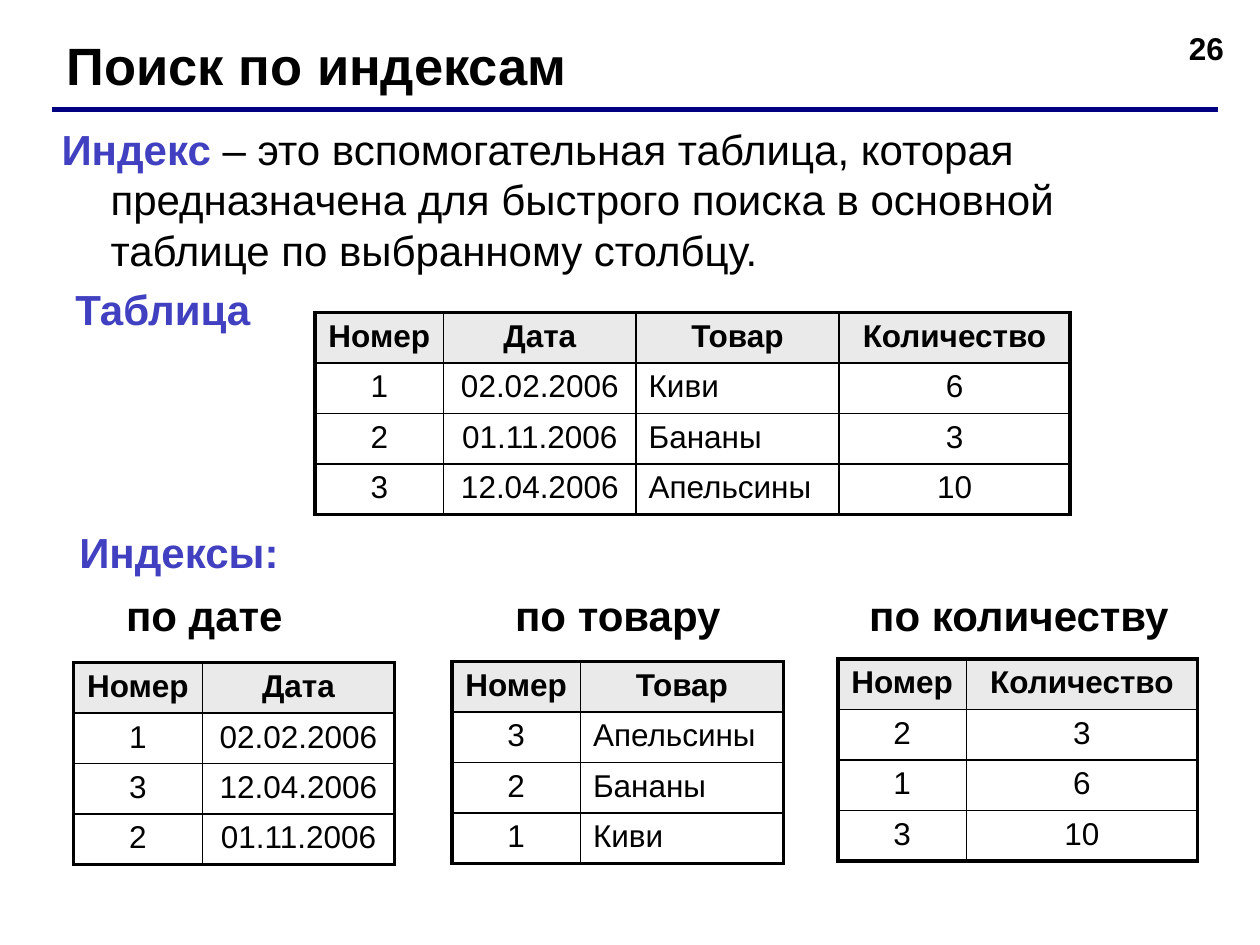
from lxml.etree import SubElement
from pptx import Presentation
from pptx.dml.color import RGBColor
from pptx.enum.shapes import MSO_CONNECTOR
from pptx.enum.text import MSO_ANCHOR, PP_ALIGN
from pptx.oxml import parse_xml
from pptx.oxml.ns import nsdecls, qn
from pptx.util import Pt

BLACK, VIOLET, NAVY, GRAY = "000000", "4040C0", "000080", "EAEAEA"
FONT = "Arial"
ROW_HEIGHT = 28.8
THICK, THIN = 2.25, 1

TITLE = "Поиск по индексам"
PAGE_NUMBER = "26"
DEFINITION = [
    ("Индекс ", VIOLET, True),
    ("– это вспомогательная таблица, которая предназначена для быстрого "
     "поиска в основной таблице по выбранному столбцу.", BLACK, False),
]
LABELS = [
    ("Таблица", VIOLET, 36, 158.4, 115.2),
    ("по товару", BLACK, 287.3, 333.4, 132.5),
    ("по количеству", BLACK, 489.6, 333.4, 187.2),
]
COLUMN_WIDTHS = {"Номер": 73.5, "Дата": 110, "Товар": 116, "Количество": 132}
LEFT_COLUMNS = {"Товар"}
TABLES = [
    (180, 178.6, [
        ("Номер", "Дата", "Товар", "Количество"),
        ("1", "02.02.2006", "Киви", "6"),
        ("2", "01.11.2006", "Бананы", "3"),
        ("3", "12.04.2006", "Апельсины", "10"),
    ]),
    (42.1, 378.7, [
        ("Номер", "Дата"),
        ("1", "02.02.2006"),
        ("3", "12.04.2006"),
        ("2", "01.11.2006"),
    ]),
    (258.2, 378, [
        ("Номер", "Товар"),
        ("3", "Апельсины"),
        ("2", "Бананы"),
        ("1", "Киви"),
    ]),
    (478.8, 376.6, [
        ("Номер", "Количество"),
        ("2", "3"),
        ("1", "6"),
        ("3", "10"),
    ]),
]


def color(value):
    return RGBColor.from_string(value)


def add_text(para, text, size=24, fill=BLACK, bold=True, align=PP_ALIGN.LEFT):
    para.alignment = align
    span = para.add_run()
    span.text = text
    span.font.name = FONT
    span.font.size = Pt(size)
    span.font.bold = bold
    span.font.color.rgb = color(fill)


def add_box(page, left, top, width, height, wrap=True):
    box = page.shapes.add_textbox(Pt(left), Pt(top), Pt(width), Pt(height))
    box.text_frame.word_wrap = wrap
    return box.text_frame


def indent(para, left, first=0):
    properties = para._p.get_or_add_pPr()
    properties.set("marL", str(Pt(left)))
    properties.set("indent", str(Pt(first)))


def set_borders(cell, widths):
    properties = cell._tc.get_or_add_tcPr()
    for position, (side, width) in enumerate(widths.items()):
        properties.insert(position, parse_xml(
            f'<a:ln{side} {nsdecls("a")} w="{Pt(width)}"><a:solidFill>'
            f'<a:srgbClr val="{BLACK}"/></a:solidFill></a:ln{side}>'))


def add_data_table(page, left, top, rows):
    header = rows[0]
    widths = [COLUMN_WIDTHS[name] for name in header]
    last_row, last_column = len(rows) - 1, len(header) - 1
    table = page.shapes.add_table(
        len(rows), len(header), Pt(left), Pt(top),
        Pt(sum(widths)), Pt(ROW_HEIGHT * len(rows))).table
    table.first_row = table.horz_banding = False
    for column, width in zip(table.columns, widths):
        column.width = Pt(width)
    for r, values in enumerate(rows):
        table.rows[r].height = Pt(ROW_HEIGHT)
        for c, value in enumerate(values):
            cell = table.cell(r, c)
            if r == 0:
                cell.fill.solid()
                cell.fill.fore_color.rgb = color(GRAY)
            else:
                cell.fill.background()
            to_left = r > 0 and header[c] in LEFT_COLUMNS
            add_text(cell.text_frame.paragraphs[0], value, size=18, bold=r == 0,
                     align=PP_ALIGN.LEFT if to_left else PP_ALIGN.CENTER)
            set_borders(cell, {
                "L": THICK if c == 0 else THIN,
                "R": THICK if c == last_column else THIN,
                "T": THICK if r == 0 else THIN,
                "B": THICK if r == last_row else THIN,
            })


def main():
    deck = Presentation()
    deck.slide_width, deck.slide_height = Pt(720), Pt(540)
    page = deck.slides.add_slide(deck.slide_layouts[5])

    title = page.shapes.title
    title.left, title.top, title.width, title.height = Pt(31), Pt(15.1), Pt(641), Pt(43.2)
    title.text_frame.vertical_anchor = MSO_ANCHOR.TOP
    add_text(title.text_frame.paragraphs[0], TITLE, size=30)

    number = add_box(page, 538.6, 13, 167.8, 37.4)
    add_text(number.paragraphs[0], PAGE_NUMBER, size=18, align=PP_ALIGN.RIGHT)

    rule = page.shapes.add_connector(
        MSO_CONNECTOR.STRAIGHT, Pt(29.5), Pt(62.6), Pt(696.2), Pt(62.6))
    rule.line.color.rgb = color(NAVY)
    rule.line.width = Pt(3)
    SubElement(rule._element.spPr, qn("a:effectLst"))

    definition = add_box(page, 28.1, 67, 674, 99.4).paragraphs[0]
    indent(definition, 28, -28)
    for text, fill, bold in DEFINITION:
        add_text(definition, text, fill=fill, bold=bold)

    for text, fill, left, top, width in LABELS:
        label = add_box(page, left, top, width, 36, wrap=False)
        add_text(label.paragraphs[0], text, fill=fill)

    indexes = add_box(page, 38.2, 297.4, 135.4, 72, wrap=False)
    add_text(indexes.paragraphs[0], "Индексы:", fill=VIOLET)
    by_date = indexes.add_paragraph()
    indent(by_date, 26.7)
    by_date.space_before = Pt(7)
    add_text(by_date, "по дате")

    for left, top, rows in TABLES:
        add_data_table(page, left, top, rows)

    deck.save("out.pptx")


if __name__ == "__main__":
    main()
